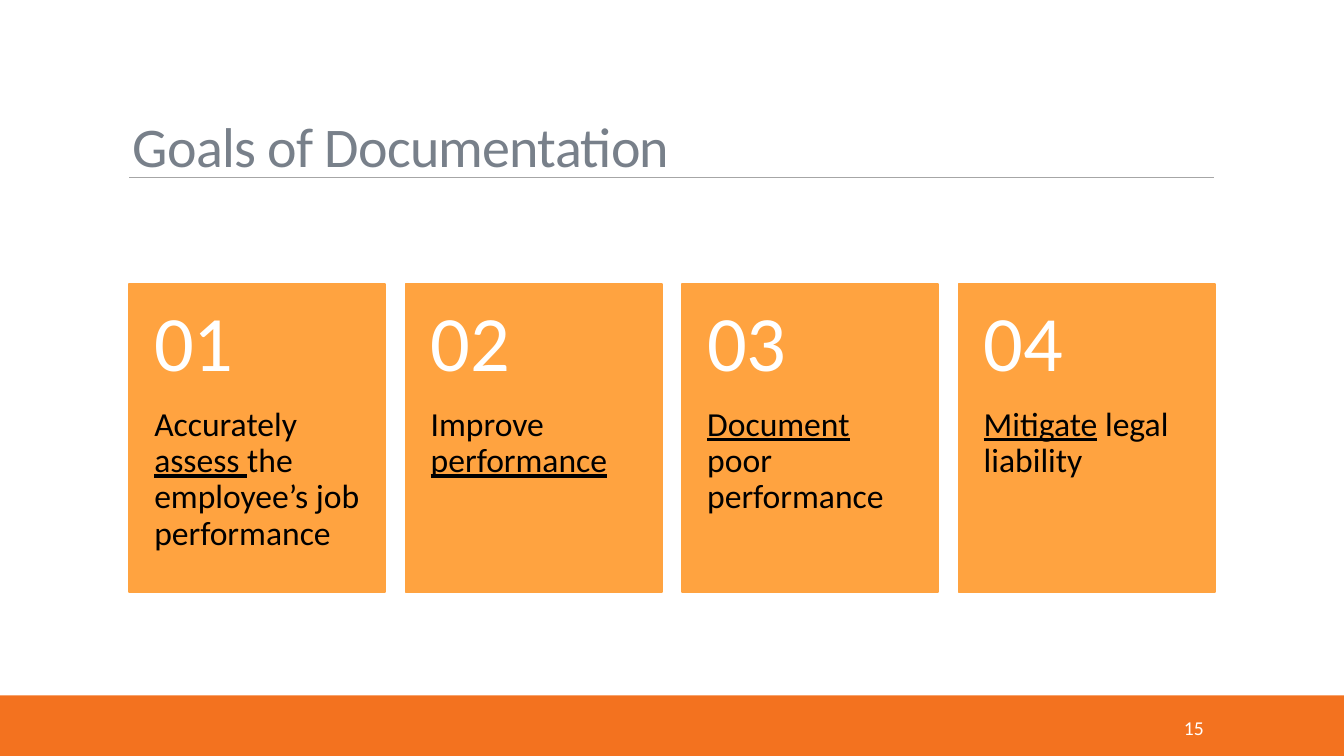
"""Build the slide on the goals of documentation."""
from dataclasses import dataclass, field

import pptx
import pptx.dml.color
import pptx.enum.shapes
import pptx.enum.text
import pptx.oxml.ns
import pptx.slide
import pptx.util
from lxml import etree

Pt = pptx.util.Pt
RGBColor = pptx.dml.color.RGBColor
Anchor = pptx.enum.text.MSO_ANCHOR
Align = pptx.enum.text.PP_ALIGN


@dataclass(frozen=True)
class Theme:
    font: str = "Calibri"
    footer: str = "F3721F"
    card: str = "FFA340"
    rule: str = "A6A6A6"
    title: str = "78808A"
    body: str = "000000"
    light: str = "FFFFFF"
    title_size: float = 40
    number_size: float = 56
    body_size: float = 24
    page_size: float = 14


@dataclass(frozen=True)
class Box:
    left: float
    top: float
    width: float
    height: float

    def lengths(self) -> list[pptx.util.Length]:
        return [Pt(value) for value in (self.left, self.top, self.width, self.height)]


@dataclass(frozen=True)
class Run:
    text: str
    underline: bool = False


@dataclass(frozen=True)
class Label:
    box: Box
    runs: tuple[Run, ...]
    size: float
    color: str
    insets: tuple[float, float, float, float] = (7.2, 3.6, 7.2, 3.6)
    anchor: Anchor = Anchor.TOP
    tracking: float = 0
    paragraph_format: dict = field(default_factory=dict)


THEME = Theme()
SLIDE_WIDTH, SLIDE_HEIGHT = 960, 540
MARGIN, RULE_TOP, RULE_RIGHT = 92.2, 126.7, 866.9
CARD_TOP, CARD_WIDTH, CARD_STEP = 203, 183, 197.5
NUMBER_HEIGHT, GOAL_HEIGHT = 87.9, 131.8
GOALS = (
    (Run("Accurately"), Run(" assess ", True), Run("the employee’s job performance")),
    (Run("Improve "), Run("performance", True)),
    (Run("Document", True), Run(" poor performance")),
    (Run("Mitigate", True), Run(" legal liability")),
)


def apply(target: object, values: dict) -> None:
    for name, value in values.items():
        setattr(target, name, value)


def add_panel(slide: pptx.slide.Slide, box: Box, color: str, line_width: float = 0) -> None:
    shape = slide.shapes.add_shape(pptx.enum.shapes.MSO_SHAPE.RECTANGLE, *box.lengths())
    shape.shadow.inherit = False
    shape.fill.solid()
    shape.fill.fore_color.rgb = RGBColor.from_string(color)
    if line_width:
        shape.line.color.rgb = RGBColor.from_string(color)
        shape.line.width = Pt(line_width)
    else:
        shape.line.fill.background()


def add_rule(slide: pptx.slide.Slide) -> None:
    connector = slide.shapes.add_connector(
        pptx.enum.shapes.MSO_CONNECTOR.STRAIGHT,
        Pt(MARGIN), Pt(RULE_TOP), Pt(RULE_RIGHT), Pt(RULE_TOP),
    )
    connector.line.color.rgb = RGBColor.from_string(THEME.rule)
    connector.line.width = Pt(1)
    etree.SubElement(connector._element.spPr, pptx.oxml.ns.qn("a:effectLst"))


def add_label(slide: pptx.slide.Slide, label: Label) -> None:
    text_frame = slide.shapes.add_textbox(*label.box.lengths()).text_frame
    margins = ("margin_left", "margin_top", "margin_right", "margin_bottom")
    apply(text_frame, dict(zip(margins, map(Pt, label.insets))))
    apply(text_frame, {"word_wrap": True, "vertical_anchor": label.anchor})
    paragraph = text_frame.paragraphs[0]
    apply(paragraph, label.paragraph_format)
    for part in label.runs:
        run = paragraph.add_run()
        run.text = part.text
        apply(run.font, {"name": THEME.font, "size": Pt(label.size), "underline": part.underline})
        run.font.color.rgb = RGBColor.from_string(label.color)
        if label.tracking:
            run.font._element.set("spc", str(round(label.tracking * 100)))


def add_card(slide: pptx.slide.Slide, index: int, goal: tuple[Run, ...]) -> None:
    left = MARGIN + index * CARD_STEP
    goal_top = CARD_TOP + NUMBER_HEIGHT
    spacing = {"line_spacing": 0.9}
    add_panel(slide, Box(left, CARD_TOP, CARD_WIDTH, NUMBER_HEIGHT + GOAL_HEIGHT), THEME.card, 1.25)
    add_label(slide, Label(
        Box(left, goal_top, CARD_WIDTH, GOAL_HEIGHT), goal, THEME.body_size, THEME.body,
        insets=(18, 0, 18, 26), paragraph_format=spacing,
    ))
    add_label(slide, Label(
        Box(left, CARD_TOP, CARD_WIDTH, NUMBER_HEIGHT), (Run(f"{index + 1:02}"),),
        THEME.number_size, THEME.light, insets=(18, 13, 18, 13),
        anchor=Anchor.MIDDLE, paragraph_format=spacing,
    ))


def main() -> None:
    presentation = pptx.Presentation()
    apply(presentation, {"slide_width": Pt(SLIDE_WIDTH), "slide_height": Pt(SLIDE_HEIGHT)})
    slide = presentation.slides.add_slide(presentation.slide_layouts[6])
    add_panel(slide, Box(0, 496.8, SLIDE_WIDTH, 43.2), THEME.footer)
    add_rule(slide)
    add_label(slide, Label(
        Box(87.8, 83.5, 612.7, 33.8), (Run("Goals of Documentation"),),
        THEME.title_size, THEME.title, tracking=-0.5, paragraph_format={"line_spacing": 0.85},
    ))
    add_label(slide, Label(
        Box(763.9, 507.6, 103, 28.8), (Run("15"),), THEME.page_size, THEME.light,
        paragraph_format={"alignment": Align.RIGHT},
    ))
    for index, goal in enumerate(GOALS):
        add_card(slide, index, goal)
    presentation.save("out.pptx")


if __name__ == "__main__":
    main()
